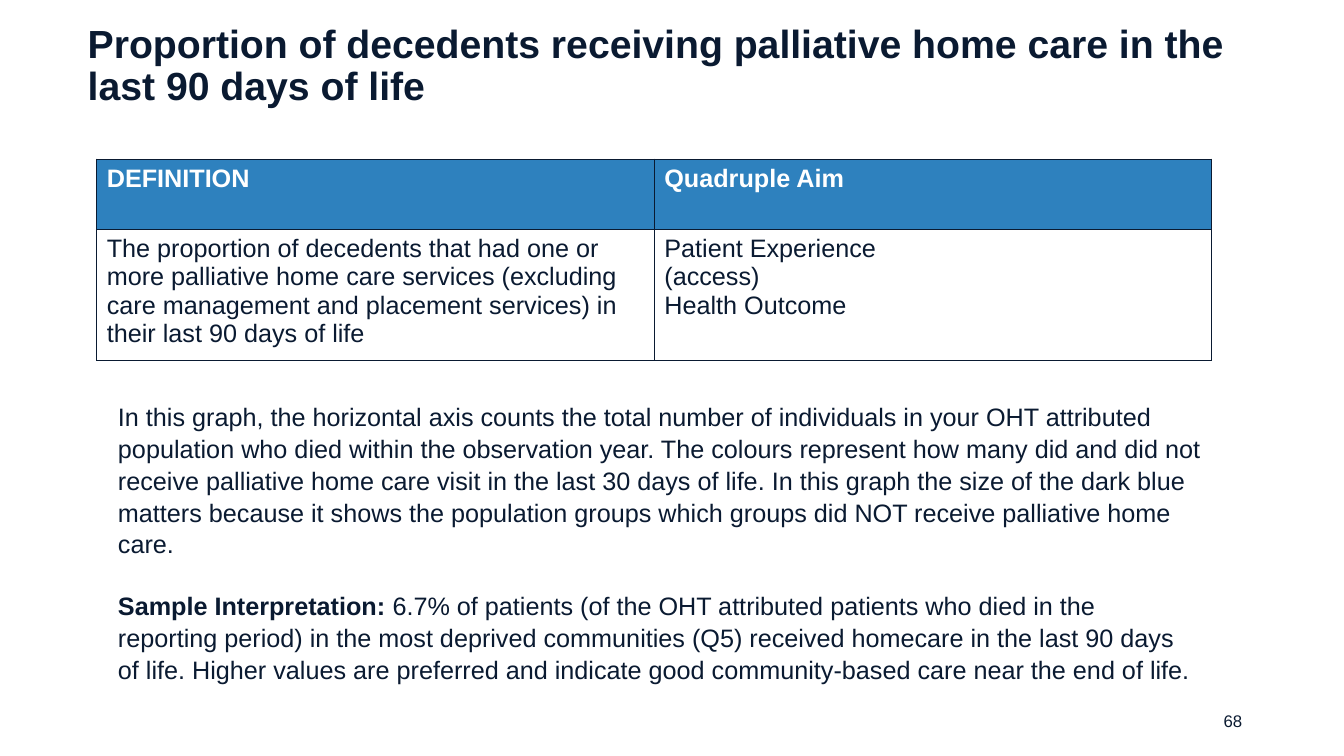
from lxml.etree import SubElement
from pptx import Presentation
from pptx.dml.color import RGBColor
from pptx.enum.text import MSO_ANCHOR, MSO_AUTO_SIZE, PP_ALIGN
from pptx.oxml.ns import qn
from pptx.util import Inches, Pt

WIDTH, HEIGHT = 13.33, 7.5
COLUMNS, ROWS = 1333, 750
FONT = "Arial"
NAVY, BLUE, WHITE = "0A1A31", "2E81BE", "FFFFFF"

TITLE = "Proportion of decedents receiving palliative home care in the last 90 days of life"
TABLE_ROWS = [
    [["DEFINITION"], ["Quadruple Aim"]],
    [
        ["The proportion of decedents that had one or more palliative home care services "
         "(excluding care management and placement services) in their last 90 days of life"],
        ["Patient Experience \n(access)", "Health Outcome"],
    ],
]
GRAPH_READING = (
    "In this graph, the horizontal axis counts the total number of individuals in your OHT attributed "
    "population who died within the observation year. The colours represent how many did and did not "
    "receive palliative home care visit in the last 30 days of life. In this graph the size of the "
    "dark blue matters because it shows the population groups which groups did NOT receive palliative "
    "home care."
)
INTERPRETATION = (
    "6.7% of patients (of the OHT attributed patients who died in the reporting period) in the most "
    "deprived communities (Q5) received homecare in the last 90 days of life. Higher values are "
    "preferred and indicate good community-based care near the end of life. "
)


def color(value):
    return RGBColor.from_string(value)


def grid(column, row, columns, rows):
    return (
        Inches(WIDTH * column / COLUMNS),
        Inches(HEIGHT * row / ROWS),
        Inches(WIDTH * columns / COLUMNS),
        Inches(HEIGHT * rows / ROWS),
    )


def place(shape, area):
    shape.left, shape.top, shape.width, shape.height = area


def add_run(paragraph, text, size=18, fill=NAVY, bold=False):
    for index, line in enumerate(text.split("\n")):
        if index:
            paragraph.add_line_break()
        run = paragraph.add_run()
        run.text = line
        run.font.name = FONT
        run.font.size = Pt(size)
        run.font.bold = bold
        run.font.color.rgb = color(fill)


def next_paragraph(frame, index):
    return frame.add_paragraph() if index else frame.paragraphs[0]


def add_title(slide):
    title = slide.shapes.title
    place(title, grid(77, 24, 1180, 84))
    frame = title.text_frame
    frame.auto_size = MSO_AUTO_SIZE.NONE
    frame.vertical_anchor = MSO_ANCHOR.MIDDLE
    paragraph = frame.paragraphs[0]
    paragraph.alignment = PP_ALIGN.LEFT
    paragraph.line_spacing = 0.9
    add_run(paragraph, TITLE, 28, bold=True)


def add_border(cell):
    properties = cell._tc.get_or_add_tcPr()
    for position, side in enumerate(("lnL", "lnR", "lnT", "lnB")):
        line = SubElement(properties, qn(f"a:{side}"), w=str(Pt(1)))
        fill = SubElement(line, qn("a:solidFill"))
        SubElement(fill, qn("a:srgbClr"), val=NAVY)
        properties.insert(position, line)


def fill_cell(cell, lines, header):
    cell.fill.solid()
    cell.fill.fore_color.rgb = color(BLUE if header else WHITE)
    for index, line in enumerate(lines):
        paragraph = next_paragraph(cell.text_frame, index)
        add_run(paragraph, line, fill=WHITE if header else NAVY, bold=header)
    add_border(cell)


def add_definition_table(slide):
    table = slide.shapes.add_table(2, 2, *grid(96, 158, 1106, 200)).table
    table.first_row = False
    table.horz_banding = False
    for row, height in zip(table.rows, (70, 130)):
        row.height = Inches(HEIGHT * height / ROWS)
    for row_index, row in enumerate(TABLE_ROWS):
        for column_index, lines in enumerate(row):
            fill_cell(table.cell(row_index, column_index), lines, row_index == 0)


def add_explanation(slide):
    body = slide.placeholders[1]
    place(body, grid(107, 392, 1095, 283))
    frame = body.text_frame
    frame.auto_size = MSO_AUTO_SIZE.NONE
    frame.vertical_anchor = MSO_ANCHOR.TOP
    paragraphs = [
        [(GRAPH_READING, False)],
        [("Sample Interpretation: ", True), (INTERPRETATION, False)],
    ]
    for index, runs in enumerate(paragraphs):
        paragraph = next_paragraph(frame, index)
        properties = paragraph._p.get_or_add_pPr()
        properties.set("marL", "0")
        properties.set("indent", "0")
        SubElement(properties, qn("a:buNone"))
        paragraph.line_spacing = 1.05
        paragraph.space_before = Pt(21.6 * index)
        for text, bold in runs:
            add_run(paragraph, text, bold=bold)


def add_page_number(slide):
    frame = slide.shapes.add_textbox(*grid(942, 695, 300, 40)).text_frame
    frame.word_wrap = True
    frame.vertical_anchor = MSO_ANCHOR.MIDDLE
    paragraph = frame.paragraphs[0]
    paragraph.alignment = PP_ALIGN.RIGHT
    add_run(paragraph, "68", 12)


def main():
    presentation = Presentation()
    presentation.slide_width = Inches(WIDTH)
    presentation.slide_height = Inches(HEIGHT)
    slide = presentation.slides.add_slide(presentation.slide_layouts[1])
    add_title(slide)
    add_definition_table(slide)
    add_explanation(slide)
    add_page_number(slide)
    presentation.save("out.pptx")


if __name__ == "__main__":
    main()
